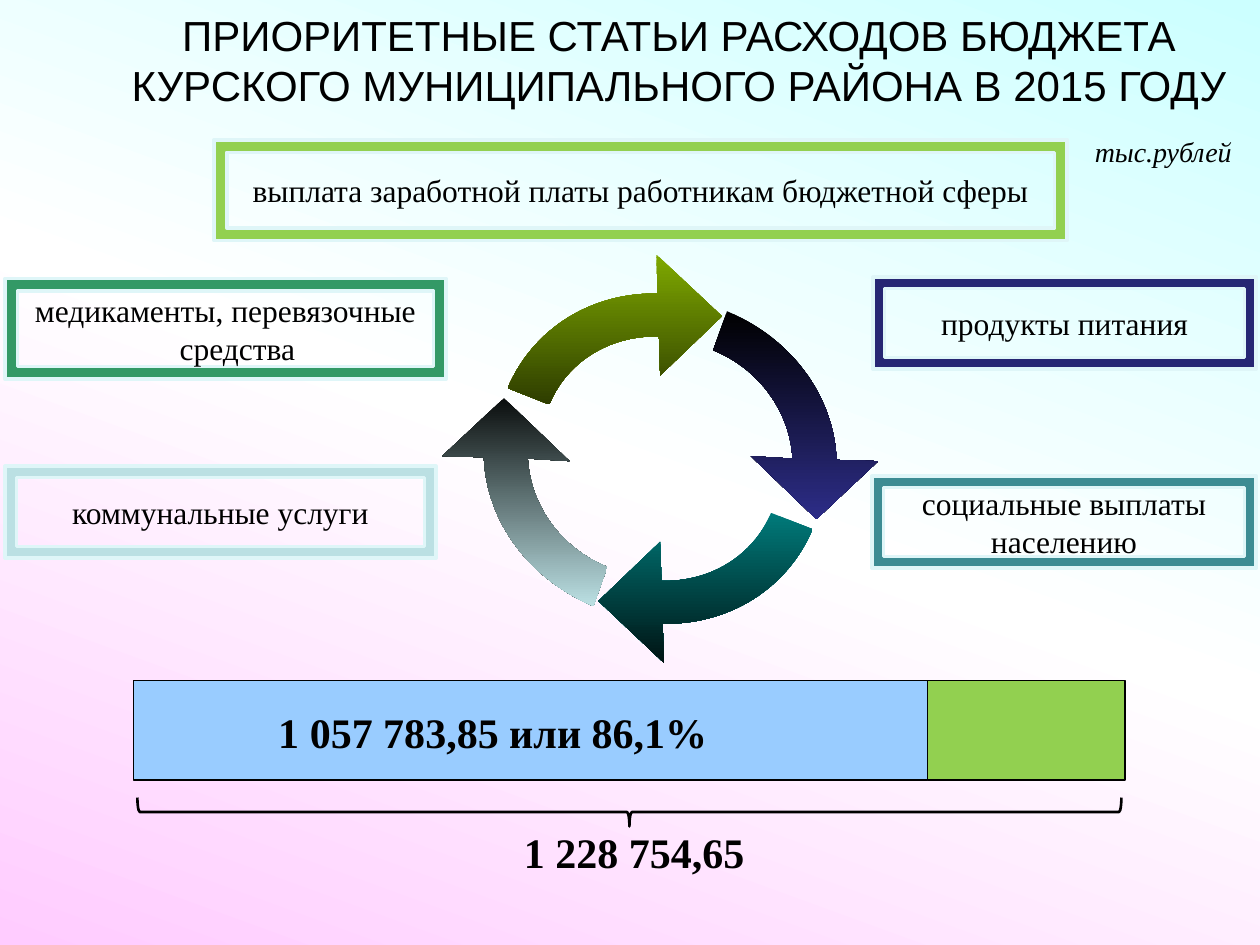
from copy import deepcopy

from lxml import etree
from pptx import Presentation
from pptx.dml.color import RGBColor
from pptx.enum import shapes, text
from pptx.oxml.ns import qn
from pptx.util import Inches, Pt

SERIF = "Times New Roman"
BLACK = "000000"
CYCLE_CENTER = (5.24, 3.64)

# Outlines: a start point, then lines (one point) and Bezier curves (three points)
BOTTOM_ARROW = [
    [(5.25, 4.61)], [(5.64, 4.62), (5.98, 4.41), (6.12, 4.07)], [(6.45, 4.2)],
    [(6.25, 4.67), (5.79, 4.96), (5.26, 4.95)], [(5.27, 5.26)], [(4.75, 4.77)], [(5.24, 4.3)],
]
LEFT_ARROW = [
    [(4.19, 3.64)], [(4.21, 4.01), (4.45, 4.35), (4.82, 4.5)], [(4.71, 4.81)],
    [(4.19, 4.59), (3.86, 4.13), (3.84, 3.63)], [(3.51, 3.62)], [(4.0, 3.16)], [(4.52, 3.66)],
]

# Outline, turned half round, top and bottom colours
ARROWS = [
    (BOTTOM_ARROW, False, "007A7A", "001414"),
    (LEFT_ARROW, False, "0A0D0D", "BBE0E3"),
    (BOTTOM_ARROW, True, "7FA900", "2E3D00"),
    (LEFT_ARROW, True, "000000", "2D2D88"),
]

# Left, top, width, height, colour, lines
FRAMES = [
    (1.7, 1.11, 6.77, 0.8, "92D050", ["выплата заработной платы работникам бюджетной сферы"]),
    (6.92, 3.78, 3.05, 0.73, "3C8C93", ["социальные выплаты населению"]),
    (0.04, 3.7, 3.42, 0.73, "BBE0E3", ["коммунальные услуги"]),
    (0.04, 2.21, 3.5, 0.8, "339966", ["медикаменты, перевязочные", "средства"]),
    (6.93, 2.2, 3.04, 0.73, "262673", ["продукты питания"]),
]


def color(value):
    return RGBColor.from_string(value)


def write(shape, lines, size=18, font=SERIF, bold=False, italic=False,
          align=text.PP_ALIGN.CENTER, anchor=text.MSO_ANCHOR.MIDDLE):
    frame = shape.text_frame
    frame.word_wrap = True
    frame.vertical_anchor = anchor
    for index, line in enumerate(lines):
        paragraph = frame.add_paragraph() if index else frame.paragraphs[0]
        paragraph.alignment = align
        run = paragraph.add_run()
        run.text = line
        run.font.size = Pt(size)
        run.font.name = font
        run.font.bold = bold
        run.font.italic = italic
        run.font.color.rgb = color(BLACK)


def add_label(slide, left, top, width, height, line, **style):
    box = slide.shapes.add_textbox(Inches(left), Inches(top), Inches(width), Inches(height))
    write(box, [line], align=text.PP_ALIGN.LEFT, anchor=text.MSO_ANCHOR.TOP, **style)


def add_preset(slide, kind, left, top, width, height, fill=None, line=BLACK, weight=0.75):
    shape = slide.shapes.add_shape(kind, Inches(left), Inches(top), Inches(width), Inches(height))
    shape.shadow.inherit = False
    if fill:
        shape.fill.solid()
        shape.fill.fore_color.rgb = color(fill)
    else:
        shape.fill.background()
    shape.line.color.rgb = color(line)
    shape.line.width = Pt(weight)
    return shape


def set_gradient(fill, colors, angle):
    """Spread the colours evenly; the angle runs counter-clockwise."""
    fill.gradient()
    fill.gradient_angle = angle
    stop_list = fill._fill._gradFill.find(qn("a:gsLst"))
    while len(stop_list) < len(colors):
        stop_list.append(deepcopy(stop_list[0]))
    for index, (stop, value) in enumerate(zip(stop_list, colors)):
        stop.set("pos", str(100000 * index // (len(colors) - 1)))
        for child in list(stop):
            stop.remove(child)
        etree.SubElement(stop, qn("a:srgbClr")).set("val", value)


def bend(shape, outline):
    """Join the three points of each curve into one Bezier segment."""
    lines = iter(list(shape._element.iter(qn("a:lnTo"))))
    for segment in outline[1:]:
        parts = [next(lines) for _ in segment]
        if len(parts) == 3:
            curve = etree.Element(qn("a:cubicBezTo"))
            parts[0].addprevious(curve)
            for part in parts:
                curve.append(part[0])
                part.getparent().remove(part)


def add_arrow(slide, outline, turned, top_color, bottom_color):
    points = [point for segment in outline for point in segment]
    if turned:
        points = [(2 * CYCLE_CENTER[0] - x, 2 * CYCLE_CENTER[1] - y) for x, y in points]
    points = [(Inches(x), Inches(y)) for x, y in points]
    builder = slide.shapes.build_freeform(*points[0])
    builder.add_line_segments(points[1:], close=True)
    arrow = builder.convert_to_shape()
    bend(arrow, outline)
    arrow.shadow.inherit = False
    arrow.line.fill.background()
    set_gradient(arrow.fill, [top_color, bottom_color], 270)


def main():
    presentation = Presentation()
    presentation.slide_width = Inches(10)
    presentation.slide_height = Inches(7.5)
    slide = presentation.slides.add_slide(presentation.slide_layouts[5])
    set_gradient(slide.background.fill, ["CCFFFF", "FFFFFF", "FFCCFF"], 250)

    # Title
    title = slide.shapes.title
    title.left, title.top = Inches(0.78), Inches(0)
    title.width, title.height = Inches(9.22), Inches(0.95)
    write(title, ["ПРИОРИТЕТНЫЕ СТАТЬИ РАСХОДОВ БЮДЖЕТА "
                  "КУРСКОГО МУНИЦИПАЛЬНОГО РАЙОНА В 2015 ГОДУ"], size=24, font="Arial")

    # Cycle of arrows
    for arrow in ARROWS:
        add_arrow(slide, *arrow)

    # Framed expense items
    for left, top, width, height, fill, lines in FRAMES:
        item = add_preset(slide, shapes.MSO_SHAPE.FRAME, left, top, width, height,
                          fill, "DFF6F8", 2)
        write(item, lines)
        if len(lines) > 1:
            item.text_frame.paragraphs[1]._p.get_or_add_pPr().set("marL", str(Inches(0.19)))

    # Budget bar with its total
    rectangle = shapes.MSO_SHAPE.RECTANGLE
    add_preset(slide, rectangle, 1.06, 5.4, 6.3, 0.79, "99CCFF")
    add_preset(slide, rectangle, 7.36, 5.4, 1.57, 0.79, "92D050")
    brace = add_preset(slide, shapes.MSO_SHAPE.RIGHT_BRACE, 4.88, 2.54, 0.23, 7.81, weight=1.5)
    brace.rotation = 90
    add_label(slide, 2.11, 5.56, 4.15, 0.5, "1 057 783,85 или 86,1%", size=24, bold=True)
    add_label(slide, 4.06, 6.51, 2.82, 0.5, "1 228 754,65", size=24, bold=True)

    # Unit of measure
    add_label(slide, 8.59, 1.02, 1.41, 0.37, "тыс.рублей", size=16, italic=True)

    presentation.save("out.pptx")


if __name__ == "__main__":
    main()
